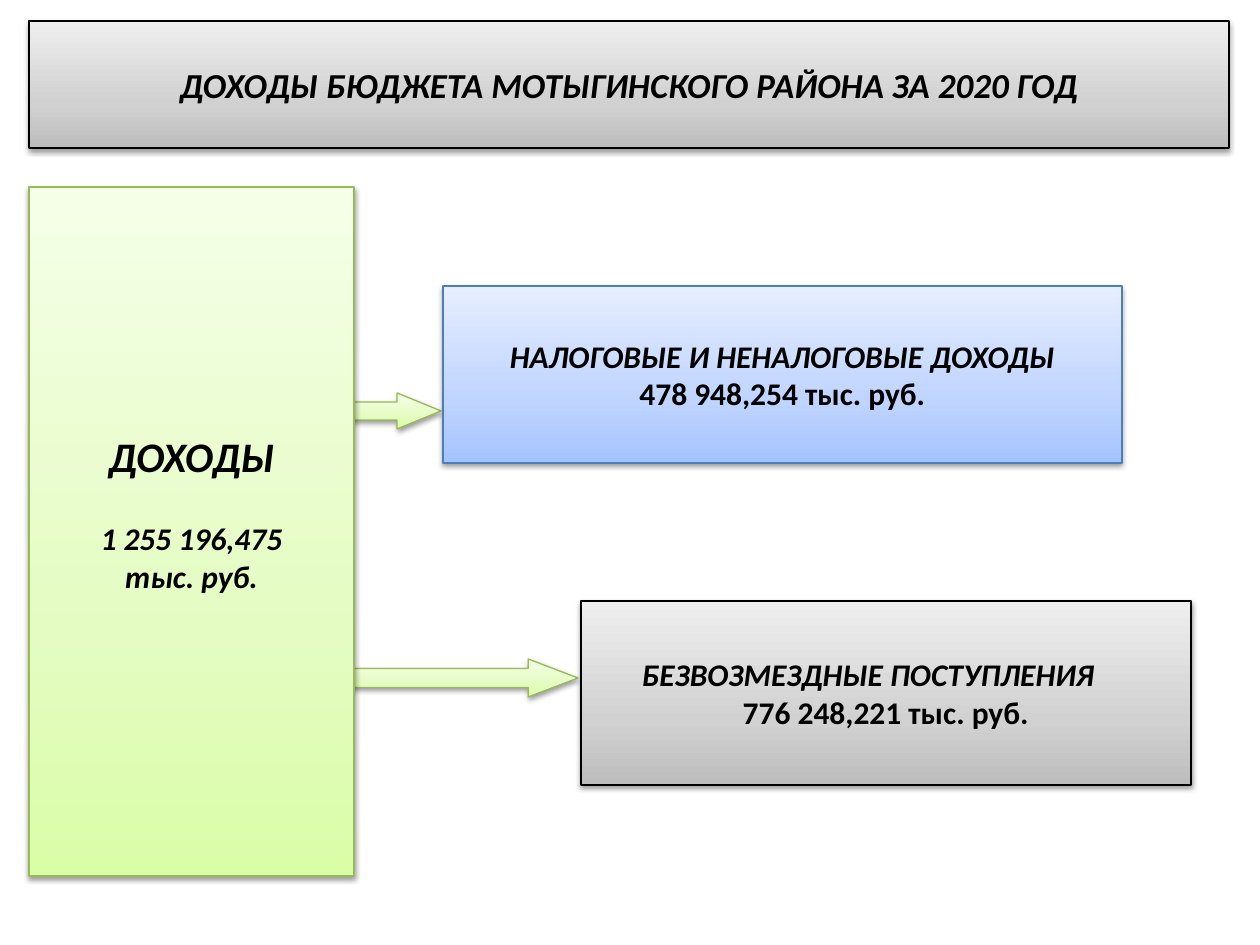
from copy import deepcopy
from lxml import etree
from pptx import Presentation
from pptx.dml.color import RGBColor
from pptx.enum.shapes import MSO_SHAPE
from pptx.enum.text import MSO_ANCHOR, PP_ALIGN
from pptx.oxml.ns import qn
from pptx.util import Pt

RECT = MSO_SHAPE.RECTANGLE
ROUND = MSO_SHAPE.ROUNDED_RECTANGLE
ARROW = MSO_SHAPE.RIGHT_ARROW
CENTER = PP_ALIGN.CENTER
MIDDLE = MSO_ANCHOR.MIDDLE

SCALE = 914400 / 126
BLACK = RGBColor(0x00, 0x00, 0x00)
GREEN = RGBColor(0x98, 0xB9, 0x55)
BLUE = RGBColor(0x4B, 0x7E, 0xBC)
GRAY_FILL = (RGBColor(0xBD, 0xBD, 0xBD), RGBColor(0xD1, 0xD1, 0xD1), RGBColor(0xEE, 0xEE, 0xEE))
GREEN_FILL = (RGBColor(0xDA, 0xFD, 0xA7), RGBColor(0xE4, 0xFC, 0xC2), RGBColor(0xF5, 0xFF, 0xE7))
BLUE_FILL = (RGBColor(0xA4, 0xC4, 0xFF), RGBColor(0xBF, 0xD4, 0xFF), RGBColor(0xE6, 0xEE, 0xFF))
GRAY_LOOK = (GRAY_FILL, BLACK)
GREEN_LOOK = (GREEN_FILL, GREEN)
BLUE_LOOK = (BLUE_FILL, BLUE)
STOPS = (0, 0.35, 1)
FONT = {"name": "Calibri", "bold": True, "italic": True}
INDENT = 35
LINE = 38


def px(n):
    """Turn pixels into EMU."""
    return round(n * SCALE)


def shade(shape, tones):
    """Fill with three tones, running from bottom to top."""
    fill = shape.fill
    fill.gradient()
    fill.gradient_angle = 90
    stops = shape.element.spPr.find(qn("a:gradFill")).find(qn("a:gsLst"))
    stops.insert(1, deepcopy(stops[0]))
    for stop, tone, pos in zip(fill.gradient_stops, tones, STOPS):
        stop.color.rgb = tone
        stop.position = pos


def cast(shape):
    """Give the shape a soft shadow below it."""
    shape.shadow.inherit = False
    effects = shape.element.spPr.find(qn("a:effectLst"))
    drop = etree.SubElement(effects, qn("a:outerShdw"), blurRad=str(Pt(3.1)),
                            dist=str(Pt(1.6)), dir="5400000", rotWithShape="0")
    tone = etree.SubElement(drop, qn("a:srgbClr"), val=str(BLACK))
    etree.SubElement(tone, qn("a:alpha"), val="38000")


def add_form(slide, kind, area, look, bends=()):
    """Add a shaded shape with an outline and a shadow."""
    shape = slide.shapes.add_shape(kind, *map(px, area))
    for i, bend in enumerate(bends):
        shape.adjustments[i] = bend
    tones, edge = look
    shade(shape, tones)
    shape.line.color.rgb = edge
    shape.line.width = Pt(0.75)
    cast(shape)
    return shape


def add_text(shape, lines, **insets):
    """Write centred lines of text, size and extra format values."""
    frame = shape.text_frame
    frame.word_wrap = True
    frame.vertical_anchor = MIDDLE
    for name, size in insets.items():
        setattr(frame, name, px(size))
    for i, (text, size, extra) in enumerate(lines):
        para = frame.add_paragraph() if i else frame.paragraphs[0]
        para.alignment = CENTER
        run = para.add_run()
        run.text = text
        for name, value in {**FONT, "size": Pt(size), **extra}.items():
            setattr(run.font, name, value)
        run.font.color.rgb = BLACK
    return frame.paragraphs


def main():
    """Build the slide and save it."""
    deck = Presentation()
    deck.slide_width, deck.slide_height = px(1260), px(945)
    slide = deck.slides.add_slide(deck.slide_layouts[6])
    plain = {"italic": False}

    add_form(slide, ARROW, (315, 659, 263, 38), GREEN_LOOK, (0.5, 1.31))
    add_form(slide, ARROW, (168, 393, 273, 36), GREEN_LOOK, (0.5, 1.22))

    title = add_form(slide, RECT, (29, 21, 1200, 127), GRAY_LOOK)
    add_text(title, [("ДОХОДЫ БЮДЖЕТА МОТЫГИНСКОГО РАЙОНА ЗА 2020 ГОД", 20, {})])

    taxes = add_form(slide, ROUND, (443, 286, 679, 177), BLUE_LOOK, (0,))
    add_text(taxes, [("НАЛОГОВЫЕ И НЕНАЛОГОВЫЕ ДОХОДЫ", 18, {}),
                     ("478 948,254 тыс. руб.", 18, plain)])

    grants = add_form(slide, ROUND, (581, 601, 610, 184), GRAY_LOOK, (0,))
    paras = add_text(grants, [("БЕЗВОЗМЕЗДНЫЕ ПОСТУПЛЕНИЯ", 18, {}),
                              ("776 248,221 тыс. руб.", 18, plain)],
                     margin_right=13 + INDENT)
    paras[1]._p.get_or_add_pPr().set("marL", str(px(INDENT)))

    total = add_form(slide, ROUND, (29, 187, 325, 689), GREEN_LOOK, (0,))
    paras = add_text(total, [("ДОХОДЫ", 24, {}), ("1 255 196,475", 18, {}),
                             ("тыс. руб.", 18, {})],
                     margin_bottom=6 + LINE)
    paras[1].space_before = Pt(22)

    deck.save("out.pptx")


if __name__ == "__main__":
    main()
